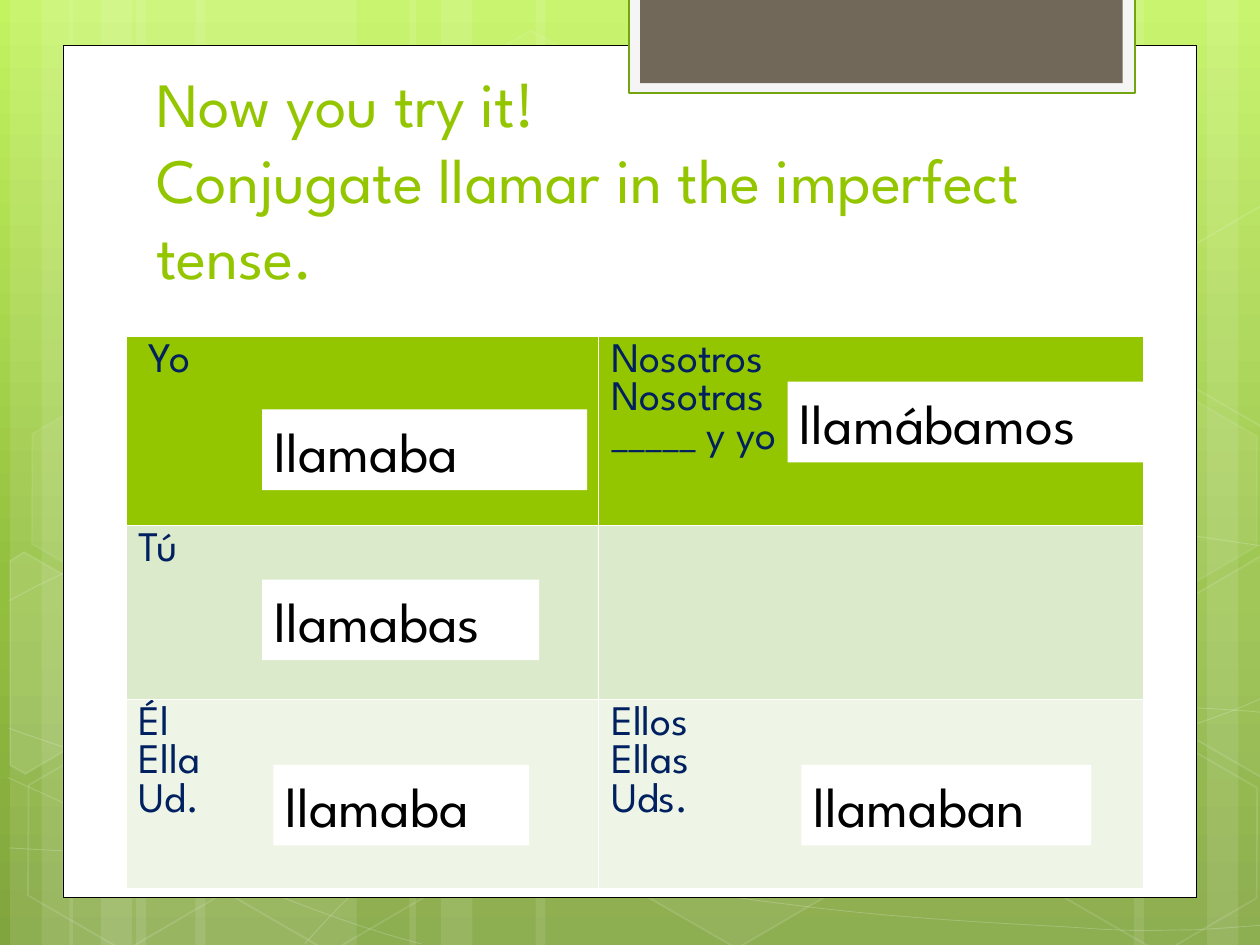
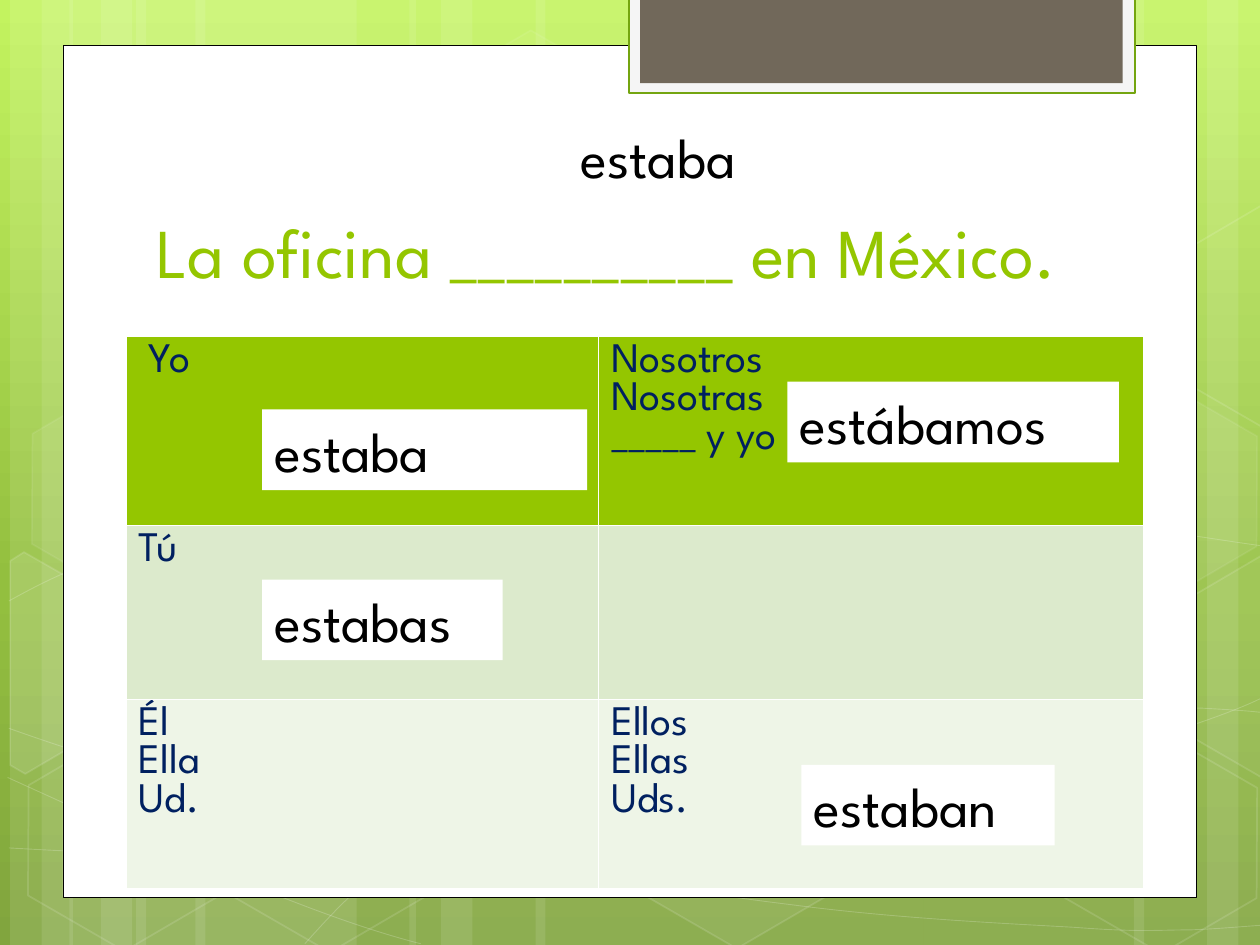
from copy import deepcopy
from math import cos, radians, sin
from typing import NamedTuple

from lxml.etree import SubElement
from pptx import Presentation
from pptx.dml.color import RGBColor
from pptx.dml.fill import FillFormat
from pptx.enum.shapes import MSO_SHAPE as Preset
from pptx.enum.text import MSO_ANCHOR as Anchor, PP_ALIGN as Align
from pptx.oxml.ns import qn
from pptx.shapes.autoshape import Shape
from pptx.slide import Slide
from pptx.text.text import TextFrame
from pptx.util import Emu, Pt

PX = 9144
FONT = "League Spartan"
WHITE, BLACK, GREEN, NAVY = "FFFFFF", "000000", "94C600", "002060"
BACKDROP = [(0, "C3F35F"), (0.62, "93BF3F"), (1, "81A53E")]
ROW_FILLS = [GREEN, "DCEACC", "EEF5E7"]
COLUMN_WIDTHS, ROW_HEIGHTS = [375, 433], [150, 138, 150]
PRONOUNS = [
    [[" Yo"], ["Nosotros", "Nosotras", "_____ y yo"]],
    [["Tú"], []],
    [["Él", "Ella", "Ud."], ["Ellos", "Ellas", "Uds."]],
]
ANSWER_HEIGHT = 64
TILT = 30
LOOSE, TIGHT = 1.21, 0.92
STRIPES = [(108, 175), (8, 50), (33, 83), (155, 175), (55, 50), (80, 83),
           (733, 175), (958, 50), (900, 83), (425, 308), (325, 50), (350, 83)]


class Panel(NamedTuple):
    """A framed rectangle of the shared page furniture."""
    left: int
    top: int
    width: int
    height: int
    fill: str
    line: str | None = None
    weight: float = 0


class Hexagon(NamedTuple):
    """A translucent hexagon; opacities are percentages."""
    left: int
    top: int
    fill_opacity: int
    line_opacity: int


class Shard(NamedTuple):
    """A tilted hexagon cut off by the page edge, turned about a pivot."""
    pivot: tuple[int, int]
    points: list[tuple[int, int]]
    fill_opacity: int


class Answer(NamedTuple):
    """A white label with one verb form."""
    word: str
    left: int
    top: int
    width: int


class Lesson(NamedTuple):
    """The content of one slide."""
    title: str
    title_size: int
    answers: list[Answer]


PANELS = [
    Panel(50, 36, 900, 676, WHITE, BLACK, 0.5),
    Panel(499, -2, 402, 76, "F5F5F5", "74A510", 1.25),
    Panel(508, -2, 383, 68, "71685A"),
]
HEXAGONS = [
    Hexagon(334, 36, 4, 8), Hexagon(497, 589, 6, 12), Hexagon(11, 591, 0, 12),
    Hexagon(14, 312, 7, 8), Hexagon(174, 592, 0, 12), Hexagon(753, 453, 10, 12),
    Hexagon(834, 593, 0, 12), Hexagon(834, 314, 7, 8),
]
SHARDS = [
    Shard((36, 535), [(8, 445), (19, 438), (96, 482), (95, 570), (20, 614), (8, 607)], 10),
    Shard((985, 520), [(926, 485), (1001, 441), (1009, 446), (1009, 613), (1002, 617),
                       (926, 573)], 4),
    Shard((985, 241), [(926, 207), (1001, 163), (1010, 168), (1009, 335), (1002, 339),
                       (926, 295)], 0),
]
CURVES = [
    [(7, 673), (61, 676), (115, 679), (190, 678), (265, 677), (358, 675), (458, 665),
     (558, 655), (700, 636), (792, 617), (883, 598), (977, 568), (1007, 551)],
    [(7, 477), (36, 461), (65, 446), (121, 431), (178, 416), (259, 394), (347, 387),
     (436, 380), (544, 379), (654, 387), (764, 395), (947, 426), (1007, 434)],
    [(6, 617), (127, 672), (247, 727), (334, 749)],
    [(7, 578), (38, 589), (70, 600), (128, 616), (186, 631), (273, 656), (357, 673),
     (440, 690), (545, 708), (628, 718), (711, 729), (800, 733), (853, 736),
     (905, 740), (919, 738), (945, 738), (971, 737), (989, 735), (1007, 734)],
    [(242, 749), (260, 729), (278, 709), (302, 691), (326, 673), (360, 653), (388, 639),
     (416, 625), (433, 619), (470, 609), (506, 599), (573, 585), (608, 578),
     (644, 571), (649, 571), (680, 569), (711, 566), (760, 563), (794, 562),
     (829, 561), (886, 562), (886, 562), (908, 562), (931, 562), (953, 562),
     (971, 563), (988, 564), (997, 565), (1006, 566), (1003, 565), (1006, 566)],
]
LESSONS = [
    Lesson("Now you try it!\vConjugate llamar in the imperfect tense.", 36, [
        Answer("llamaba", 208, 325, 258), Answer("llamabas", 208, 460, 220),
        Answer("llamaba", 217, 607, 203), Answer("llamábamos", 625, 303, 292),
        Answer("llamaban", 636, 607, 230),
    ]),
    Lesson("La oficina __________ en México.", 40, [
        Answer("estaba", 208, 325, 258), Answer("estabas", 208, 460, 191),
        Answer("estaba", 451, 92, 174), Answer("estábamos", 625, 303, 263),
        Answer("estaban", 636, 607, 201),
    ]),
]


def px(*lengths: float) -> list[Emu]:
    """Turn px into EMU."""
    return [Emu(round(length * PX)) for length in lengths]


def paint(fill: FillFormat, colour: str) -> None:
    """Give a fill one solid colour."""
    fill.solid()
    fill.fore_color.rgb = RGBColor.from_string(colour)


def fade(shape: Shape, route: str, opacity: int) -> None:
    """Set the opacity of the solid fill found along a route below spPr."""
    if opacity < 100:
        colour = shape.element.spPr.find(f"{route}/{qn('a:srgbClr')}")
        SubElement(colour, qn("a:alpha"), val=str(opacity * 1000))


def dress(shape: Shape, fill: str | None, line: str | None = None, weight: float = 0,
          fill_opacity: int = 100, line_opacity: int = 100) -> Shape:
    """Set the fill, line and opacities of a shape and drop its shadow."""
    shape.shadow.inherit = False
    if fill and fill_opacity:
        paint(shape.fill, fill)
        fade(shape, qn("a:solidFill"), fill_opacity)
    else:
        shape.fill.background()
    if line:
        paint(shape.line.fill, line)
        shape.line.width = Pt(weight)
        fade(shape, f"{qn('a:ln')}/{qn('a:solidFill')}", line_opacity)
    else:
        shape.line.fill.background()
    return shape


def write(frame: TextFrame, lines: list[str], size: int, colour: str, leading: float) -> None:
    """Write one left-aligned paragraph per line."""
    frame.word_wrap = True
    frame.text = "\n".join(lines)
    look = {"name": FONT, "size": Pt(size), "bold": False}
    for para in frame.paragraphs:
        para.alignment = Align.LEFT
        para.line_spacing = Pt(size * leading)
        for span in para.runs:
            for name, value in look.items():
                setattr(span.font, name, value)
            span.font.color.rgb = RGBColor.from_string(colour)


def draw_rectangle(page: Slide, panel: Panel, opacity: int = 100) -> Shape:
    """Draw a rectangle."""
    box = page.shapes.add_shape(Preset.RECTANGLE, *px(*panel[:4]))
    return dress(box, panel.fill, panel.line, panel.weight, fill_opacity=opacity)


def draw_outline(page: Slide, points: list[tuple[float, float]], close: bool) -> Shape:
    """Draw a freeform through points."""
    start, *rest = [tuple(px(*point)) for point in points]
    builder = page.shapes.build_freeform(*start, scale=1.0)
    builder.add_line_segments(rest, close=close)
    return builder.convert_to_shape()


def draw_curve(page: Slide, controls: list[tuple[int, int]]) -> Shape:
    """Draw an open chain of cubic curves, three control points to each."""
    shape = draw_outline(page, controls, False)
    outline = shape.element.find(f".//{qn('a:pathLst')}")[0]
    segments = outline.findall(qn("a:lnTo"))
    for first in range(0, len(segments), 3):
        cubic = SubElement(outline, qn("a:cubicBezTo"))
        for segment in segments[first:first + 3]:
            cubic.append(segment[0])
            outline.remove(segment)
    return shape


def turn_back(point: tuple[int, int], pivot: tuple[int, int]) -> tuple[float, float]:
    """Undo the tilt of a point about a pivot."""
    angle = radians(TILT)
    across, down = point[0] - pivot[0], point[1] - pivot[1]
    return (pivot[0] + across * cos(angle) + down * sin(angle),
            pivot[1] - across * sin(angle) + down * cos(angle))


def draw_backdrop(page: Slide) -> None:
    """Draw the gradient, stripes, curves, hexagons and panels."""
    fill = page.background.fill
    fill.gradient()
    fill.gradient_angle = 270
    stops = page.element.find(f".//{qn('a:gsLst')}")
    stops.append(deepcopy(stops[0]))
    for stop, (position, colour) in zip(fill.gradient_stops, BACKDROP):
        stop.position = position
        stop.color.rgb = RGBColor.from_string(colour)
    for left, width in STRIPES:
        draw_rectangle(page, Panel(left, 0, width, 750, WHITE), opacity=10)
    for controls in CURVES:
        dress(draw_curve(page, controls), None, WHITE, 0.5, line_opacity=20)
    for left, top, fill_opacity, line_opacity in HEXAGONS:
        hexagon = page.shapes.add_shape(Preset.HEXAGON, *px(left, top, 175, 152))
        hexagon.adjustments[0] = 0.285
        hexagon.rotation = TILT
        dress(hexagon, WHITE, WHITE, 1, fill_opacity, line_opacity)
    for pivot, points, fill_opacity in SHARDS:
        shard = draw_outline(page, [turn_back(point, pivot) for point in points], True)
        shard.rotation = TILT
        dress(shard, WHITE, WHITE, 1, fill_opacity, 12)
    for panel in PANELS:
        draw_rectangle(page, panel)


def draw_title(page: Slide, lesson: Lesson) -> None:
    """Draw the title, standing on the bottom of its box."""
    frame = page.shapes.add_textbox(*px(114, 50, 768, 187)).text_frame
    frame.vertical_anchor = Anchor.BOTTOM
    write(frame, [lesson.title], lesson.title_size, GREEN, LOOSE)


def draw_pronouns(page: Slide) -> None:
    """Draw the table of pronouns."""
    area = px(100, 267, sum(COLUMN_WIDTHS), sum(ROW_HEIGHTS))
    table = page.shapes.add_table(len(ROW_HEIGHTS), len(COLUMN_WIDTHS), *area).table
    for column, width in zip(table.columns, px(*COLUMN_WIDTHS)):
        column.width = width
    for row, height, colour, texts in zip(table.rows, px(*ROW_HEIGHTS), ROW_FILLS, PRONOUNS):
        row.height = height
        for cell, lines in zip(row.cells, texts):
            paint(cell.fill, colour)
            write(cell.text_frame, lines, 24, NAVY, TIGHT)


def draw_answers(page: Slide, answers: list[Answer]) -> None:
    """Draw the white labels with the verb forms."""
    for word, left, top, width in answers:
        box = draw_rectangle(page, Panel(left, top, width, ANSWER_HEIGHT, WHITE))
        box.text_frame.vertical_anchor = Anchor.TOP
        write(box.text_frame, [word], 32, BLACK, LOOSE)


def main() -> None:
    """Build and save the deck."""
    deck = Presentation()
    deck.slide_width, deck.slide_height = px(1000, 750)
    for lesson in LESSONS:
        page = deck.slides.add_slide(deck.slide_layouts[6])
        draw_backdrop(page)
        draw_title(page, lesson)
        draw_pronouns(page)
        draw_answers(page, lesson.answers)
    deck.save("out.pptx")


if __name__ == "__main__":
    main()
